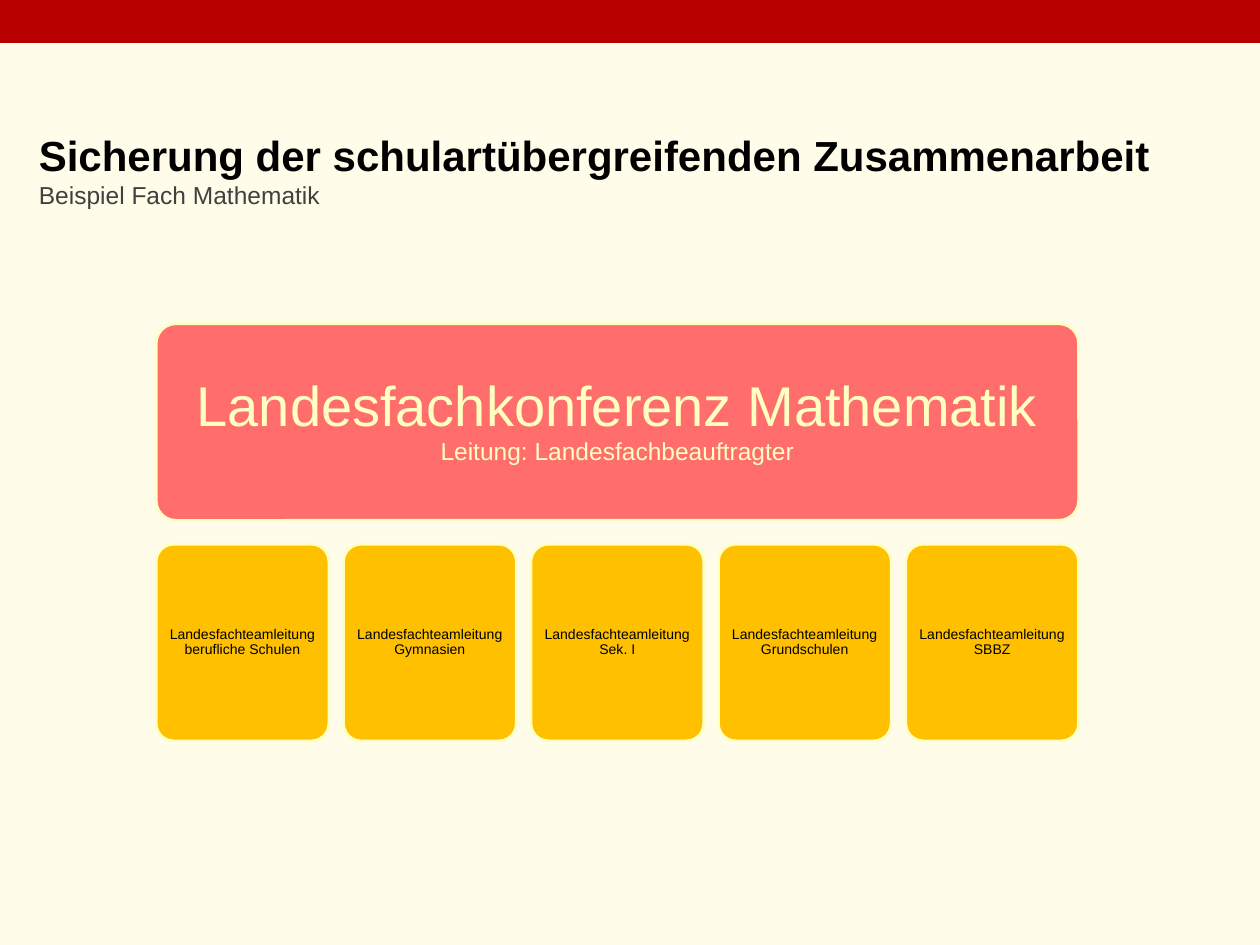
"""Build the slide on cooperation between school types in mathematics."""
from pptx import Presentation
from pptx.dml.color import RGBColor
from pptx.enum.shapes import MSO_SHAPE
from pptx.enum.text import MSO_ANCHOR, PP_ALIGN
from pptx.util import Inches, Pt

RECTANGLE = MSO_SHAPE.RECTANGLE
ROUNDED = MSO_SHAPE.ROUNDED_RECTANGLE
MIDDLE = MSO_ANCHOR.MIDDLE
LEFT, CENTER = PP_ALIGN.LEFT, PP_ALIGN.CENTER

FONT = "Arial"
BACKGROUND, RED, CORAL, AMBER = "FFFDE9", "B80000", "FF6D6D", "FFC000"
BLACK, GRAY, CREAM = "000000", "404040", "FFFFC1"

TITLE = [
    ("Sicherung der schulartübergreifenden Zusammenarbeit", 24, BLACK, True),
    ("Beispiel Fach Mathematik", 14, GRAY, False),
]
CONFERENCE = [
    ("Landesfachkonferenz Mathematik", 32, CREAM, False),
    ("Leitung: Landesfachbeauftragter", 14, CREAM, False),
]
TEAMS = ["berufliche Schulen", "Gymnasien", "Sek. I", "Grundschulen", "SBBZ"]

SLIDE_WIDTH, SLIDE_HEIGHT = 10, 7.5
CHART_LEFT, CHART_TOP, CHART_WIDTH = 1.24, 2.57, 7.32
ROW_HEIGHT, ROW_PITCH = 1.56, 1.75
TEAM_WIDTH = 1.37
TEAM_PITCH = (CHART_WIDTH - TEAM_WIDTH) / (len(TEAMS) - 1)


def color(value):
    return RGBColor.from_string(value)


def write(shape, lines, alignment, spacing, margin=None):
    frame = shape.text_frame
    frame.word_wrap = True
    frame.vertical_anchor = MIDDLE
    if margin is not None:
        frame.margin_left = frame.margin_right = Inches(margin)
        frame.margin_top = frame.margin_bottom = Inches(margin)
    paragraph = frame.paragraphs[0]
    paragraph.alignment = alignment
    paragraph.line_spacing = spacing
    for index, (text, size, text_color, bold) in enumerate(lines):
        if index:
            paragraph.add_line_break()
        run = paragraph.add_run()
        run.text = text
        run.font.name = FONT
        run.font.size = Pt(size)
        run.font.bold = bold
        run.font.color.rgb = color(text_color)


def add_box(slide, kind, place, fill):
    shape = slide.shapes.add_shape(kind, *map(Inches, place))
    shape.shadow.inherit = False
    shape.fill.solid()
    shape.fill.fore_color.rgb = color(fill)
    shape.line.fill.background()
    return shape


def add_card(slide, place, fill, lines, margin):
    card = add_box(slide, ROUNDED, place, fill)
    card.adjustments[0] = 0.1
    card.line.color.rgb = color(CREAM)
    card.line.width = Pt(1.5)
    write(card, lines, CENTER, 0.9, margin)


def main():
    presentation = Presentation()
    presentation.slide_width = Inches(SLIDE_WIDTH)
    presentation.slide_height = Inches(SLIDE_HEIGHT)
    slide = presentation.slides.add_slide(presentation.slide_layouts[6])
    slide.background.fill.solid()
    slide.background.fill.fore_color.rgb = color(BACKGROUND)

    add_box(slide, RECTANGLE, (0, 0, SLIDE_WIDTH, 0.34), RED)
    title = slide.shapes.add_textbox(*map(Inches, (0.21, 0.76, 9.38, 1.17)))
    write(title, TITLE, LEFT, 1.0)

    conference_place = (CHART_LEFT, CHART_TOP, CHART_WIDTH, ROW_HEIGHT)
    add_card(slide, conference_place, CORAL, CONFERENCE, 0.13)
    for column, team in enumerate(TEAMS):
        left = CHART_LEFT + column * TEAM_PITCH
        place = (left, CHART_TOP + ROW_PITCH, TEAM_WIDTH, ROW_HEIGHT)
        lines = [(f"Landesfachteamleitung {team}", 8, BLACK, False)]
        add_card(slide, place, AMBER, lines, 0.03)

    presentation.save("out.pptx")


if __name__ == "__main__":
    main()
